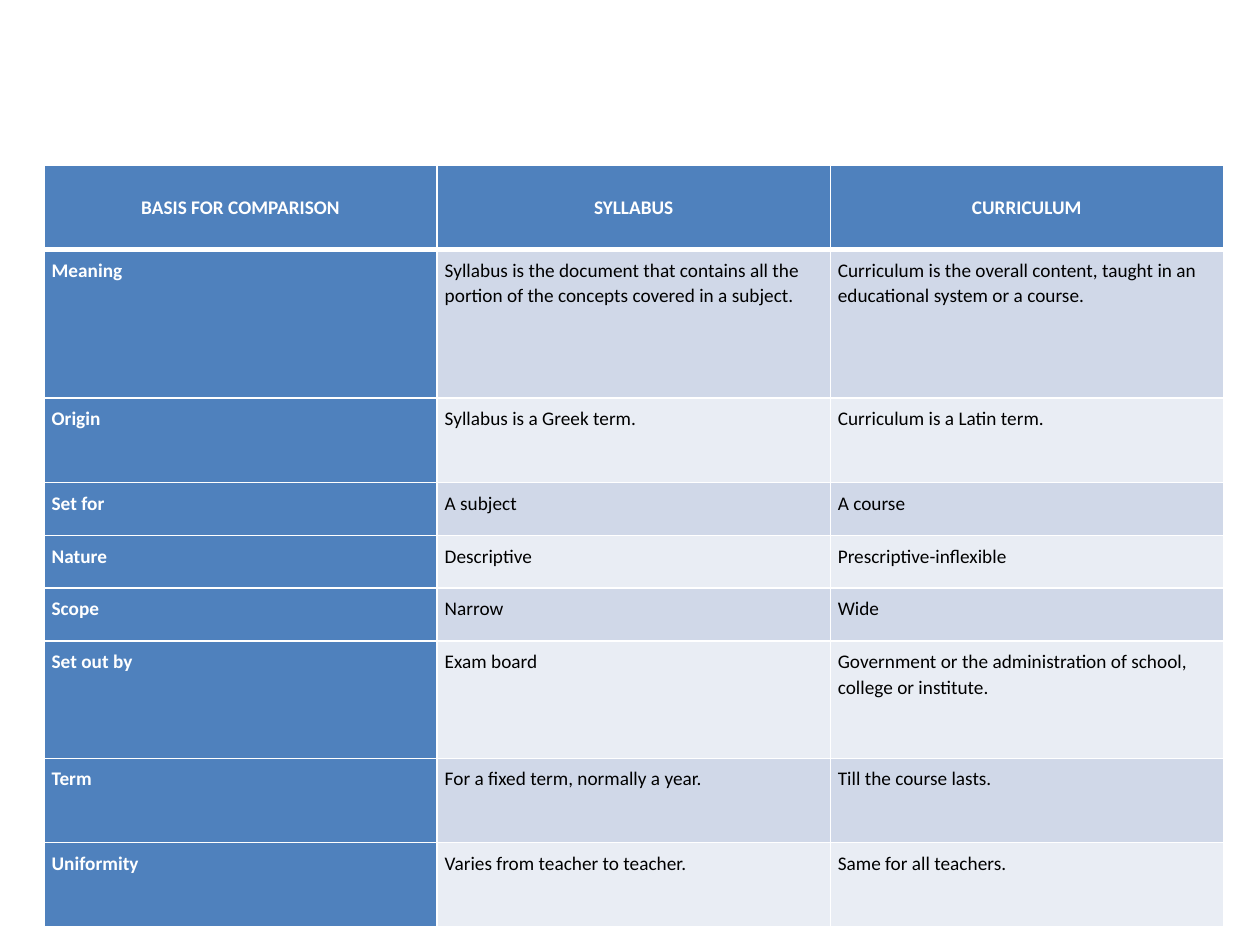
from lxml.etree import SubElement
from pptx import Presentation
from pptx.dml.color import RGBColor
from pptx.enum.text import MSO_ANCHOR, PP_ALIGN
from pptx.oxml.ns import qn
from pptx.util import Inches, Pt

BLUE = RGBColor(0x4F, 0x81, 0xBD)
DARK_BAND = RGBColor(0xD0, 0xD8, 0xE8)
LIGHT_BAND = RGBColor(0xE9, 0xED, 0xF4)
WHITE = RGBColor(0xFF, 0xFF, 0xFF)
BLACK = RGBColor(0x00, 0x00, 0x00)

ROWS = [
    (0.67, "BASIS FOR COMPARISON", "SYLLABUS", "CURRICULUM"),
    (1.18, "Meaning",
     "Syllabus is the document that contains all the portion of the concepts covered in a subject.",
     "Curriculum is the overall content, taught in an educational system or a course."),
    (0.67, "Origin", "Syllabus is a Greek term.", "Curriculum is a Latin term."),
    (0.42, "Set for", "A subject", "A course"),
    (0.42, "Nature", "Descriptive", "Prescriptive-inflexible"),
    (0.42, "Scope", "Narrow", "Wide"),
    (0.93, "Set out by", "Exam board",
     "Government or the administration of school, college or institute."),
    (0.67, "Term", "For a fixed term, normally a year.", "Till the course lasts."),
    (0.67, "Uniformity", "Varies from teacher to teacher.", "Same for all teachers."),
]


def add_border(cell, side, width):
    line = SubElement(cell._tc.get_or_add_tcPr(), qn(f"a:ln{side}"), w=str(Pt(width)))
    fill = SubElement(line, qn("a:solidFill"))
    SubElement(fill, qn("a:srgbClr"), val=str(WHITE))


presentation = Presentation()
presentation.slide_width = Inches(10)
presentation.slide_height = Inches(7.5)
slide = presentation.slides.add_slide(presentation.slide_layouts[6])

table = slide.shapes.add_table(
    len(ROWS), 3, Inches(0.35), Inches(1.31), Inches(9.37), Inches(6.05)
).table
table.first_col = True
for column in table.columns:
    column.width = Inches(3.12)

for row_index, (height, *texts) in enumerate(ROWS):
    table.rows[row_index].height = Inches(height)
    is_header = row_index == 0
    for column_index, text in enumerate(texts):
        cell = table.cell(row_index, column_index)
        is_heading = is_header or column_index == 0
        add_border(cell, "L", 1)
        add_border(cell, "R", 1)
        add_border(cell, "T", 3 if row_index == 1 else 1)
        add_border(cell, "B", 3 if is_header else 1)
        cell.fill.solid()
        band = DARK_BAND if row_index % 2 else LIGHT_BAND
        cell.fill.fore_color.rgb = BLUE if is_heading else band
        cell.margin_left = cell.margin_right = Inches(0.06)
        cell.margin_top = cell.margin_bottom = Inches(0.06)
        cell.vertical_anchor = MSO_ANCHOR.MIDDLE if is_header else MSO_ANCHOR.TOP
        cell.text = text
        paragraph = cell.text_frame.paragraphs[0]
        paragraph.alignment = PP_ALIGN.CENTER if is_header else PP_ALIGN.LEFT
        paragraph.line_spacing = 1.07
        paragraph.space_after = Pt(12)
        paragraph.font.name = "Calibri"
        paragraph.font.size = Pt(11)
        paragraph.font.bold = is_heading
        paragraph.font.color.rgb = WHITE if is_heading else BLACK

presentation.save("out.pptx")
